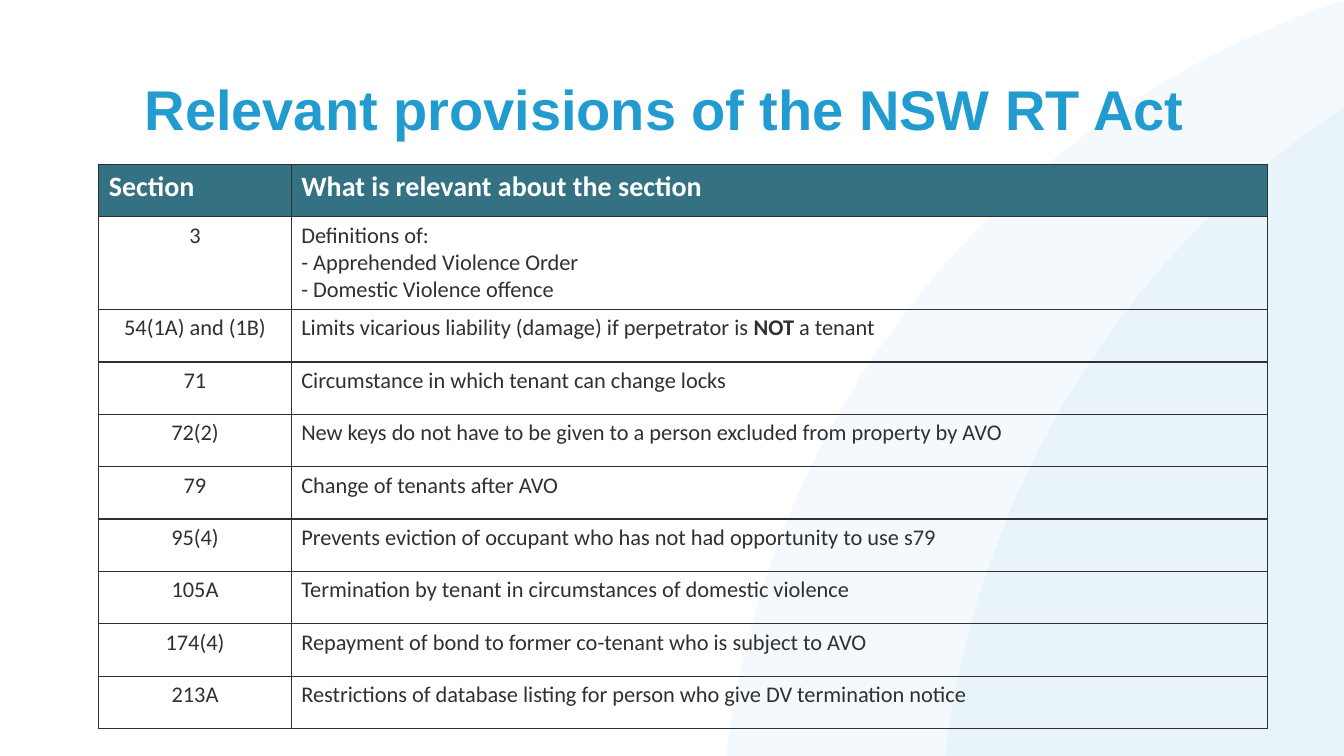
from dataclasses import dataclass

from lxml.etree import SubElement
from pptx import Presentation
from pptx.dml.color import RGBColor
from pptx.enum.shapes import MSO_SHAPE as Shape
from pptx.enum.text import MSO_ANCHOR as Anchor, PP_ALIGN as Align
from pptx.oxml.ns import qn
from pptx.util import Cm, Pt


@dataclass(frozen=True)
class Theme:
    accent: str = "229CD0"
    header: str = "347182"
    ink: str = "303030"
    white: str = "FFFFFF"
    title_font: str = "Arial"
    table_font: str = "Calibri"
    title_size: int = 40
    header_size: int = 20
    body_size: int = 16
    border: int = 1
    ellipse_opacity: int = 5


THEME = Theme()

HEADINGS = ["Section", "What is relevant about the section"]

# Each provision is a section and its lines; a line is a list of (text, bold) runs.
PROVISIONS = [
    ("3", [[("Definitions of:", False)],
           [("- Apprehended Violence Order", False)],
           [("- Domestic Violence offence", False)]]),
    ("54(1A) and (1B)", [[
        ("Limits vicarious liability (damage) if perpetrator is ", False),
        ("NOT ", True), ("a tenant", False)]]),
    ("71", [[("Circumstance in which tenant can change locks", False)]]),
    ("72(2)", [[("New keys do not have to be given to a person excluded "
                 "from property by AVO", False)]]),
    ("79", [[("Change of tenants after AVO", False)]]),
    ("95(4)", [[("Prevents eviction of occupant who has not had opportunity "
                 "to use s79", False)]]),
    ("105A", [[("Termination by tenant in circumstances of domestic violence",
                False)]]),
    ("174(4)", [[("Repayment of bond to former co-tenant who is subject to AVO",
                  False)]]),
    ("213A", [[("Restrictions of database listing for person who give DV "
                "termination notice", False)]]),
]


def add_run(paragraph, text, font, size, color, bold=False):
    run = paragraph.add_run()
    run.text = text
    run.font.name = font
    run.font.size = Pt(size)
    run.font.bold = bold
    run.font.color.rgb = RGBColor.from_string(color)


def add_background_ellipse(slide, left):
    diameter = Cm(45.77)
    ellipse = slide.shapes.add_shape(Shape.OVAL, left, Cm(-1.14), diameter, diameter)
    ellipse.shadow.inherit = False
    ellipse.line.fill.background()
    ellipse.fill.solid()
    ellipse.fill.fore_color.rgb = RGBColor.from_string(THEME.accent)
    color = ellipse.fill._xPr.find(f".//{qn('a:srgbClr')}")
    SubElement(color, qn("a:alpha"), val=str(THEME.ellipse_opacity * 1000))


def add_title(slide, text):
    frame = slide.shapes.add_textbox(Cm(0.89), Cm(1.75), Cm(31.7), Cm(3.1)).text_frame
    frame.word_wrap = True
    frame.vertical_anchor = Anchor.TOP
    frame.margin_left = frame.margin_right = Cm(0.13)
    frame.margin_top = frame.margin_bottom = Cm(0.13)
    paragraph = frame.paragraphs[0]
    paragraph.alignment = Align.CENTER
    add_run(paragraph, text, THEME.title_font, THEME.title_size, THEME.accent, True)


def add_borders(cell):
    properties = cell._tc.get_or_add_tcPr()
    for side in ("lnL", "lnR", "lnT", "lnB"):
        line = SubElement(properties, qn(f"a:{side}"), w=str(Pt(THEME.border)))
        fill = SubElement(line, qn("a:solidFill"))
        SubElement(fill, qn("a:srgbClr"), val=THEME.ink)


def fill_cell(cell, lines, size, color, alignment=Align.LEFT, fill=None):
    add_borders(cell)
    if fill:
        cell.fill.solid()
        cell.fill.fore_color.rgb = RGBColor.from_string(fill)
    else:
        cell.fill.background()
    frame = cell.text_frame
    for index, runs in enumerate(lines):
        paragraph = frame.add_paragraph() if index else frame.paragraphs[0]
        paragraph.alignment = alignment
        for text, bold in runs:
            add_run(paragraph, text, THEME.table_font, size, color, bold)


def add_provisions_table(slide):
    widths = [Cm(4.85), Cm(24.6)]
    heights = [Cm(1.32)] + [Cm(2.34 if len(lines) > 1 else 1.32)
                            for _, lines in PROVISIONS]
    table = slide.shapes.add_table(len(heights), len(widths), Cm(2.49), Cm(4.14),
                                   sum(widths), sum(heights)).table
    table.first_row = table.horz_banding = False
    for column, width in zip(table.columns, widths):
        column.width = width
    for row, height in zip(table.rows, heights):
        row.height = height

    for index, heading in enumerate(HEADINGS):
        fill_cell(table.cell(0, index), [[(heading, True)]],
                  THEME.header_size, THEME.white, fill=THEME.header)
    for index, (section, lines) in enumerate(PROVISIONS, start=1):
        fill_cell(table.cell(index, 0), [[(section, False)]],
                  THEME.body_size, THEME.ink, Align.CENTER)
        fill_cell(table.cell(index, 1), lines, THEME.body_size, THEME.ink)


def main():
    presentation = Presentation()
    presentation.slide_width = Cm(33.87)
    presentation.slide_height = Cm(19.05)
    slide = presentation.slides.add_slide(presentation.slide_layouts[6])
    for left in (Cm(18.14), Cm(23.67)):
        add_background_ellipse(slide, left)
    add_title(slide, "Relevant provisions of the NSW RT Act")
    add_provisions_table(slide)
    presentation.save("out.pptx")


if __name__ == "__main__":
    main()
